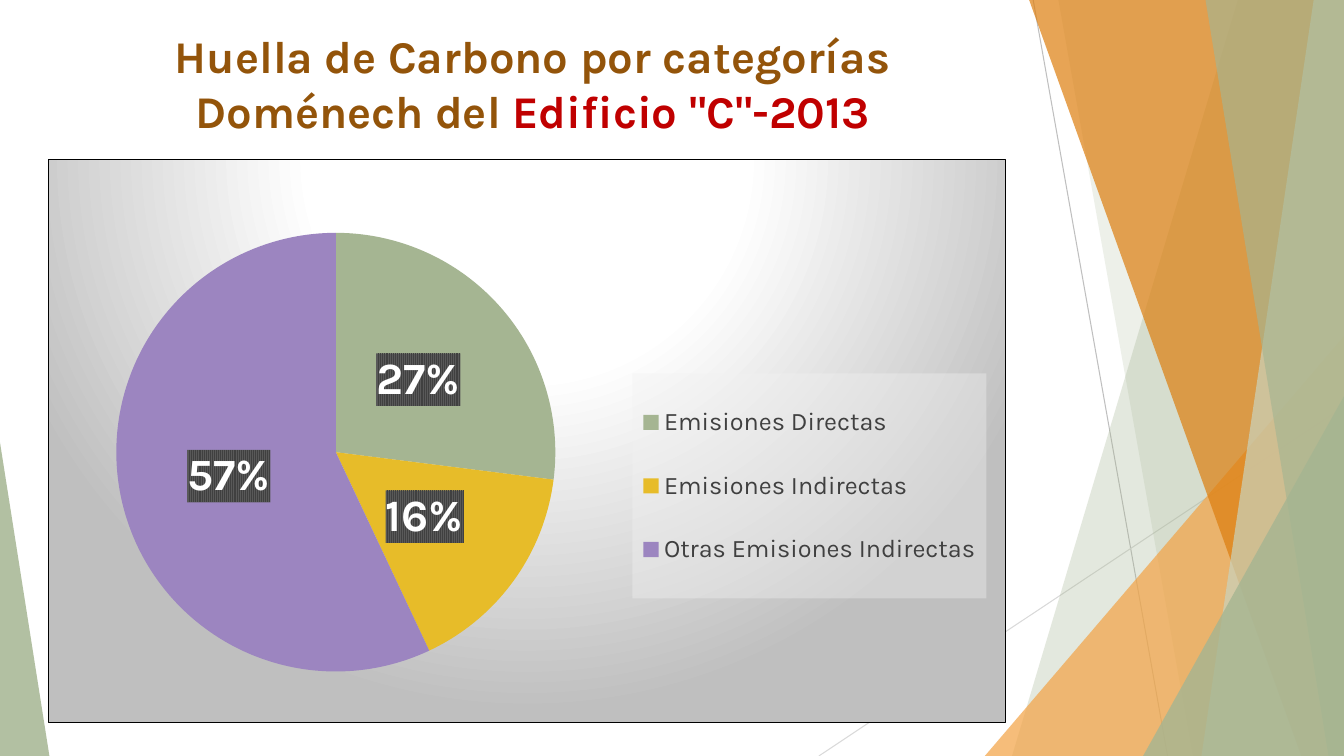
from lxml import etree
from pptx import Presentation
from pptx.chart.data import CategoryChartData
from pptx.dml.color import RGBColor
from pptx.enum.chart import XL_CHART_TYPE as CHART, XL_LABEL_POSITION as LABEL, XL_LEGEND_POSITION as LEGEND
from pptx.enum.shapes import MSO_CONNECTOR as CONNECTOR, MSO_SHAPE as SHAPE
from pptx.enum.text import MSO_ANCHOR as ANCHOR, PP_ALIGN as ALIGN
from pptx.oxml import parse_xml
from pptx.oxml.ns import qn
from pptx.util import Inches, Pt

# The slide is a grid of 40 columns by 22.5 rows of square cells.
COLS, ROWS = 40, 22.5
FONT = "Karla"
NAMESPACES = (
    'xmlns:a="http://schemas.openxmlformats.org/drawingml/2006/main" '
    'xmlns:c="http://schemas.openxmlformats.org/drawingml/2006/chart"'
)
SLICES = [
    ("Emisiones Directas", 27, "A5B592"),
    ("Emisiones Indirectas", 16, "E7BC29"),
    ("Otras Emisiones Indirectas", 57, "9C85C0"),
]


def cells(*counts):
    return [Inches(count / 3) for count in counts]


def rgb(code):
    return RGBColor.from_string(code)


def paint(shape, color, opacity):
    """Fill a shape with a see-through colour, without line or shadow."""
    shape.shadow.inherit = False
    shape.line.fill.background()
    shape.fill.solid()
    shape.fill.fore_color.rgb = rgb(color)
    tint = shape.fill._xPr.find(".//" + qn("a:srgbClr"))
    etree.SubElement(tint, qn("a:alpha"), val=str(opacity * 1000))


def add_hairline(slide, start, end, color):
    line = slide.shapes.add_connector(CONNECTOR.STRAIGHT, *cells(*start, *end))
    line.line.color.rgb = rgb(color)
    line.line.width = Pt(0.75)
    etree.SubElement(line._element.spPr, qn("a:effectLst"))


def add_band(slide, top, bottom, color, opacity):
    """Draw a band from a slanted left side to the slide's right edge."""
    start, *corners = [
        cells(*point) for point in [(top, 0), (COLS, 0), (COLS, ROWS), (bottom, ROWS)]
    ]
    outline = slide.shapes.build_freeform(*start)
    outline.add_line_segments(corners, close=True)
    paint(outline.convert_to_shape(), color, opacity)


def add_corner(slide, left, width, height, apex, color, opacity):
    """Draw a triangle standing on the bottom edge; apex is 0 (left) to 1 (right)."""
    corner = slide.shapes.add_shape(
        SHAPE.ISOSCELES_TRIANGLE, *cells(left, ROWS - height, width, height)
    )
    corner.adjustments[0] = apex
    paint(corner, color, opacity)


def add_title(slide, box, parts):
    frame = slide.shapes.add_textbox(*cells(*box)).text_frame
    frame.word_wrap = True
    frame.vertical_anchor = ANCHOR.TOP
    frame.margin_left = frame.margin_right = Inches(0.3)
    frame.margin_top = Inches(0.07)
    title = frame.paragraphs[0]
    title.alignment = ALIGN.CENTER
    title.font.name, title.font.size, title.font.bold = FONT, Pt(32.4), True
    for text, color in parts:
        run = title.add_run()
        run.text = text
        run.font.color.rgb = rgb(color)


def fixed_layout(x, y, w, h, inner=False):
    """Layout element in shares of the chart's size."""
    target = '<c:layoutTarget val="inner"/>' if inner else ""
    sizes = "".join(
        f'<c:{key} val="{share}"/>' for key, share in zip("xywh", (x, y, w, h))
    )
    return parse_xml(
        f"<c:layout {NAMESPACES}><c:manualLayout>{target}"
        f'<c:xMode val="edge"/><c:yMode val="edge"/>{sizes}</c:manualLayout></c:layout>'
    )


def look(content):
    return parse_xml(f"<c:spPr {NAMESPACES}>{content}</c:spPr>")


def solid(color, extra=""):
    return f'<a:solidFill><a:srgbClr val="{color}">{extra}</a:srgbClr></a:solidFill>'


def set_font(font, size, color, bold=False):
    font.name, font.size, font.bold = FONT, Pt(size), bold
    font.color.rgb = rgb(color)


def style_backdrop(chart):
    stops = "".join(
        f'<a:gs pos="{share * 1000}"><a:srgbClr val="{color}"/></a:gs>'
        for share, color in [(0, "FFFFFF"), (39, "FFFFFF"), (100, "BFBFBF")]
    )
    chart._chartSpace.find(qn("c:chart")).addnext(look(
        f'<a:gradFill><a:gsLst>{stops}</a:gsLst><a:path path="circle">'
        '<a:fillToRect l="50000" t="-80000" r="50000" b="180000"/></a:path></a:gradFill>'
        f'<a:ln w="9525">{solid("000000")}</a:ln>'
    ))


def style_legend(chart):
    chart.has_legend = True
    legend = chart.legend
    legend.position = LEGEND.RIGHT
    legend.include_in_layout = False
    set_font(legend.font, 18, "404040")
    element = legend._element
    for old in element.findall(qn("c:layout")):
        element.remove(old)
    element.find(qn("c:legendPos")).addnext(fixed_layout(0.61, 0.38, 0.37, 0.4))
    element.find(qn("c:txPr")).addprevious(look(solid("F2F2F2", '<a:alpha val="39000"/>')))


def style_labels(plot):
    plot.has_data_labels = True
    labels = plot.data_labels
    labels.show_percentage, labels.show_value = True, False
    labels.number_format, labels.number_format_is_linked = "0%", False
    labels.position = LABEL.CENTER
    set_font(labels.font, 32, "FFFFFF", bold=True)
    labels._element.find(qn("c:txPr")).addprevious(look(
        '<a:pattFill prst="narVert"><a:fgClr><a:srgbClr val="404040"/></a:fgClr>'
        '<a:bgClr><a:srgbClr val="595959"/></a:bgClr></a:pattFill>'
    ))


def add_pie(slide, box):
    names, shares, colors = zip(*SLICES)
    data = CategoryChartData()
    data.categories = names
    data.add_series("Series 1", shares)
    chart = slide.shapes.add_chart(CHART.PIE, *cells(*box), data).chart
    chart.has_title = False
    set_font(chart.font, 10, "000000")
    style_backdrop(chart)
    style_legend(chart)

    plot = chart.plots[0]
    plot.vary_by_categories = True
    style_labels(plot)
    for index, color in enumerate(colors):
        wedge = plot.series[0].points[index].format
        wedge.fill.solid()
        wedge.fill.fore_color.rgb = rgb(color)
        wedge.line.fill.background()

    area = chart._chartSpace.find(".//" + qn("c:plotArea"))
    for old in area.findall(qn("c:layout")):
        area.remove(old)
    area.insert(0, fixed_layout(0.07, 0.13, 0.46, 0.78, inner=True))


def add_scenery(slide):
    add_hairline(slide, (30.75, 0), (34.75, ROWS), "BFBFBF")
    add_hairline(slide, (COLS, 12.1), (24.37, ROWS), "D9D9D9")
    add_band(slide, 36.84, 30.12, "A5B592", 30)
    add_band(slide, 31.5, 35.5, "A5B592", 20)
    add_corner(slide, 29.31, 10.69, 12.5, 1, "F3A447", 72)
    add_band(slide, 30.63, 38.73, "DD7E0E", 70)
    add_band(slide, 39.1, 35.76, "C9D3BE", 70)
    add_band(slide, 35.88, 39.54, "A5B592", 65)
    add_corner(slide, 34.02, 5.98, 10.71, 1, "A5B592", 80)
    add_corner(slide, 0, 1.47, 9.33, 0, "A5B592", 85)


def main():
    deck = Presentation()
    deck.slide_width, deck.slide_height = cells(COLS, ROWS)
    slide = deck.slides.add_slide(deck.slide_layouts[6])
    add_scenery(slide)
    add_title(slide, (1.44, 0.63, 28.83, 3.36), [
        ("Huella de Carbono por categorías Doménech del ", "93540A"),
        ('Edificio "C"-2013', "C00000"),
    ])
    add_pie(slide, (1.44, 4.74, 28.5, 16.77))
    deck.save("out.pptx")


if __name__ == "__main__":
    main()
